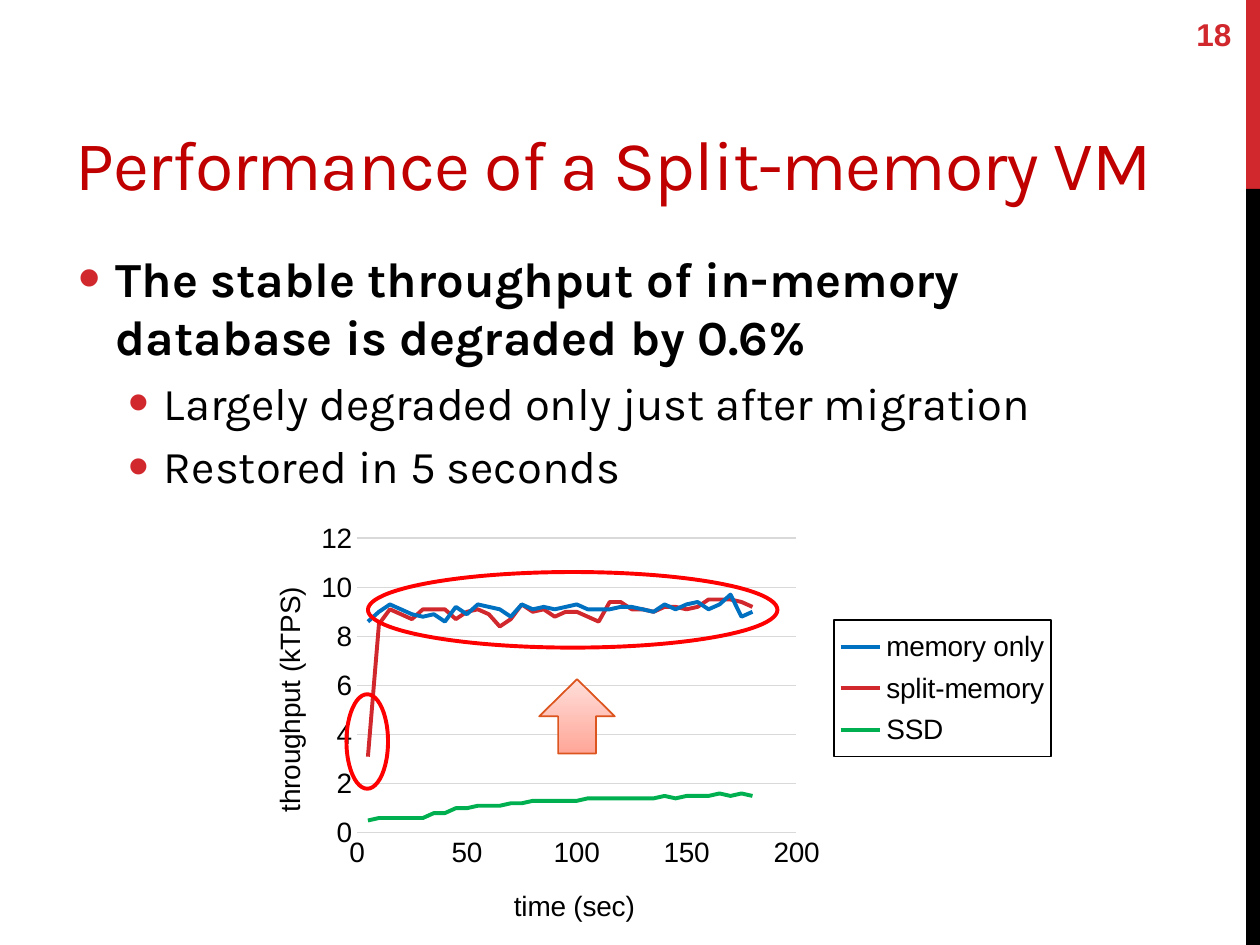
from lxml import etree
from pptx import Presentation
from pptx.chart.data import XyChartData
from pptx.dml.color import RGBColor
from pptx.enum import chart as ch, shapes, text
from pptx.oxml import parse_xml
from pptx.oxml.ns import nsdecls, qn
from pptx.util import Inches, Pt

RED, BLACK = RGBColor(0xD1, 0x28, 0x2E), RGBColor(0, 0, 0)
TITLE_RED, MARK_RED = RGBColor(0xC0, 0, 0), RGBColor(0xFF, 0, 0)
BLUE, GREEN = RGBColor(0, 0x70, 0xC0), RGBColor(0, 0xB0, 0x50)
GRID = RGBColor(0xD9, 0xD9, 0xD9)
ARROW_LINE = RGBColor(0xDC, 0x55, 0x1F)
ARROW_DARK, ARROW_LIGHT = RGBColor(0xFF, 0xA6, 0x98), RGBColor(0xFF, 0xDE, 0xD9)

# Content
TITLE = "Performance of a Split-memory VM"
BULLETS = [  # text, size, bold, left margin, hanging indent, space before
    ("The stable throughput of in-memory database is degraded by 0.6%", 28, True, 0.3, 0.3, 6),
    ("Largely degraded only just after migration", 26, False, 0.68, 0.28, 5.2),
    ("Restored in 5 seconds", 26, False, 0.68, 0.28, 5.2),
]
STEP = 5  # seconds between samples
SERIES = [
    ("memory only", BLUE, [
        8.6, 9, 9.3, 9.1, 8.9, 8.8, 8.9, 8.6, 9.2, 8.9, 9.3, 9.2,
        9.1, 8.8, 9.3, 9.1, 9.2, 9.1, 9.2, 9.3, 9.1, 9.1, 9.1, 9.2,
        9.2, 9.1, 9, 9.3, 9.1, 9.3, 9.4, 9.1, 9.3, 9.7, 8.8, 9]),
    ("split-memory", RED, [
        3.1, 8.5, 9.1, 8.9, 8.7, 9.1, 9.1, 9.1, 8.7, 9, 9.1, 8.9,
        8.4, 8.7, 9.3, 9, 9.1, 8.8, 9, 9, 8.8, 8.6, 9.4, 9.4,
        9.1, 9.1, 9, 9.2, 9.2, 9.1, 9.2, 9.5, 9.5, 9.5, 9.4, 9.2]),
    ("SSD", GREEN, [
        0.5, 0.6, 0.6, 0.6, 0.6, 0.6, 0.8, 0.8, 1, 1, 1.1, 1.1,
        1.1, 1.2, 1.2, 1.3, 1.3, 1.3, 1.3, 1.3, 1.4, 1.4, 1.4, 1.4,
        1.4, 1.4, 1.4, 1.5, 1.4, 1.5, 1.5, 1.5, 1.6, 1.5, 1.6, 1.5]),
]
W, H = 10, 7.5
BAR_LEFT, BAR_SPLIT = 9.89, H / 5
CHART = (1.86, 4.08, 6.62, 3.42)
PLOT_BOX = (2.83, 4.27, 3.49, 2.34)
LEGEND_BOX = (6.62, 4.92, 1.72, 1.08)
ELLIPSES = [(2.92, 4.54, 3.25, 0.6), (2.75, 5.51, 0.33, 0.75)]
ARROW = (4.28, 5.39, 0.6, 0.59)

prs = Presentation()
prs.slide_width, prs.slide_height = Inches(W), Inches(H)
slide = prs.slides.add_slide(prs.slide_layouts[6])


def box(at):
    return [Inches(v) for v in at]


def style(font, size, color=BLACK, name="Arial", bold=False):
    font.size, font.name, font.bold = Pt(size), name, bold
    font.color.rgb = color


def add_text(p, words, **fmt):
    r = p.add_run()
    r.text = words
    style(r.font, **fmt)
    return r


def text_frame(at, anchor):
    tf = slide.shapes.add_textbox(*box(at)).text_frame
    tf.word_wrap, tf.vertical_anchor = True, anchor
    return tf


def add_shape(kind, at, fill=None, line=None, width=2.25):
    sp = slide.shapes.add_shape(kind, *box(at))
    sp.shadow.inherit = False
    if fill is None:
        sp.fill.background()
    else:
        sp.fill.solid()
        sp.fill.fore_color.rgb = fill
    if line is None:
        sp.line.fill.background()
    else:
        sp.line.color.rgb, sp.line.width = line, Pt(width)
    return sp


def add_bullet(p, left, hang):
    pPr = p._p.get_or_add_pPr()
    pPr.set("marL", str(Inches(left)))
    pPr.set("indent", str(-Inches(hang)))
    color = etree.SubElement(pPr, qn("a:buClr"))
    etree.SubElement(color, qn("a:srgbClr"), val=str(RED))
    etree.SubElement(pPr, qn("a:buSzPct"), val="130000")
    etree.SubElement(pPr, qn("a:buFont"), typeface="Arial")
    etree.SubElement(pPr, qn("a:buChar"), char="•")


def place(element, after, at, inner=False):
    """Fix a chart part, given in slide inches, right after its named child."""
    for old in element.findall(qn("c:layout")):
        element.remove(old)
    shares = [(at[0] - CHART[0]) / CHART[2], (at[1] - CHART[1]) / CHART[3]]
    shares += [size / full for size, full in zip(at[2:], CHART[2:])]
    tags = '<c:layoutTarget val="inner"/>' if inner else ""
    tags += '<c:xMode val="edge"/><c:yMode val="edge"/>'
    tags += "".join(f'<c:{n} val="{v:.3f}"/>' for n, v in zip("xywh", shares))
    layout = parse_xml(f'<c:layout {nsdecls("c")}><c:manualLayout>{tags}'
                       '</c:manualLayout></c:layout>')
    if after:
        element.find(qn(after)).addnext(layout)
    else:
        element.insert(0, layout)


def set_axis(axis, words, title_at, top, major):
    axis.minimum_scale, axis.maximum_scale, axis.major_unit = 0, top, major
    axis.major_tick_mark = axis.minor_tick_mark = ch.XL_TICK_MARK.NONE
    axis.tick_labels.number_format = "General"
    axis.tick_labels.number_format_is_linked = False
    style(axis.tick_labels.font, 16)
    add_text(axis.axis_title.text_frame.paragraphs[0], words, size=16)
    place(axis.axis_title._element, "c:tx", title_at)


# Side bar
add_shape(shapes.MSO_SHAPE.RECTANGLE, (BAR_LEFT, 0, W - BAR_LEFT, BAR_SPLIT), RED)
add_shape(shapes.MSO_SHAPE.RECTANGLE, (BAR_LEFT, BAR_SPLIT, W - BAR_LEFT, H - BAR_SPLIT), BLACK)

# Title, bullets and slide number
tf = text_frame((0.5, 0.17, 9.02, 1.5), text.MSO_ANCHOR.BOTTOM)
r = add_text(tf.paragraphs[0], TITLE, size=40, color=TITLE_RED, name="Karla")
r.font._element.set("spc", "-60")

tf = text_frame((0.5, 1.92, 9.02, 2.1), text.MSO_ANCHOR.TOP)
tf.margin_left = tf.margin_right = Inches(0.12)
for i, (words, size, bold, left, hang, before) in enumerate(BULLETS):
    p = tf.add_paragraph() if i else tf.paragraphs[0]
    p.level = int(i > 0)
    p.space_before = Pt(before)
    add_bullet(p, left, hang)
    add_text(p, words, size=size, name="Karla", bold=bold)

tf = text_frame((9.12, 0.07, 0.75, 0.4), text.MSO_ANCHOR.MIDDLE)
tf.paragraphs[0].alignment = text.PP_ALIGN.RIGHT
add_text(tf.paragraphs[0], "18", size=18, color=RED, bold=True)

# Throughput chart
data = XyChartData()
for name, _, values in SERIES:
    s = data.add_series(name)
    for i, value in enumerate(values, 1):
        s.add_data_point(i * STEP, value)
chart = slide.shapes.add_chart(
    ch.XL_CHART_TYPE.XY_SCATTER_LINES_NO_MARKERS, *box(CHART), data).chart
style(chart.font, 10)
chart.has_title = False
chart.plots[0].vary_by_categories = False
for s, (_, color, _) in zip(chart.plots[0].series, SERIES):
    s.smooth = False
    s.marker.style = ch.XL_MARKER_STYLE.NONE
    s.format.line.color.rgb, s.format.line.width = color, Pt(2.25)

x_axis, y_axis = chart.category_axis, chart.value_axis
set_axis(x_axis, "time (sec)", (4.04, 7.01), 200, 50)
set_axis(y_axis, "throughput (kTPS)", (2.12, 4.62), 12, 2)
x_axis.has_major_gridlines, y_axis.has_major_gridlines = False, True
y_axis.format.line.fill.background()
for line in (x_axis.format.line, y_axis.major_gridlines.format.line):
    line.color.rgb, line.width = GRID, Pt(0.75)

chart.has_legend = True
legend = chart.legend
legend.position, legend.include_in_layout = ch.XL_LEGEND_POSITION.RIGHT, False
style(legend.font, 16)
place(legend._element, "c:legendPos", LEGEND_BOX)
frame = parse_xml(f'<c:spPr {nsdecls("c", "a")}><a:ln w="9525"><a:solidFill>'
                  f'<a:srgbClr val="{BLACK}"/></a:solidFill></a:ln></c:spPr>')
legend._element.find(qn("c:txPr")).addprevious(frame)
place(chart._chartSpace.chart.plotArea, None, PLOT_BOX, inner=True)

# Highlights over the chart
for at in ELLIPSES:
    add_shape(shapes.MSO_SHAPE.OVAL, at, line=MARK_RED)
sp = add_shape(shapes.MSO_SHAPE.UP_ARROW, ARROW, line=ARROW_LINE, width=1)
sp.fill.gradient()
sp.fill.gradient_angle = 90
for stop, color in zip(sp.fill.gradient_stops, (ARROW_DARK, ARROW_LIGHT)):
    stop.color.rgb = color

prs.save("out.pptx")
